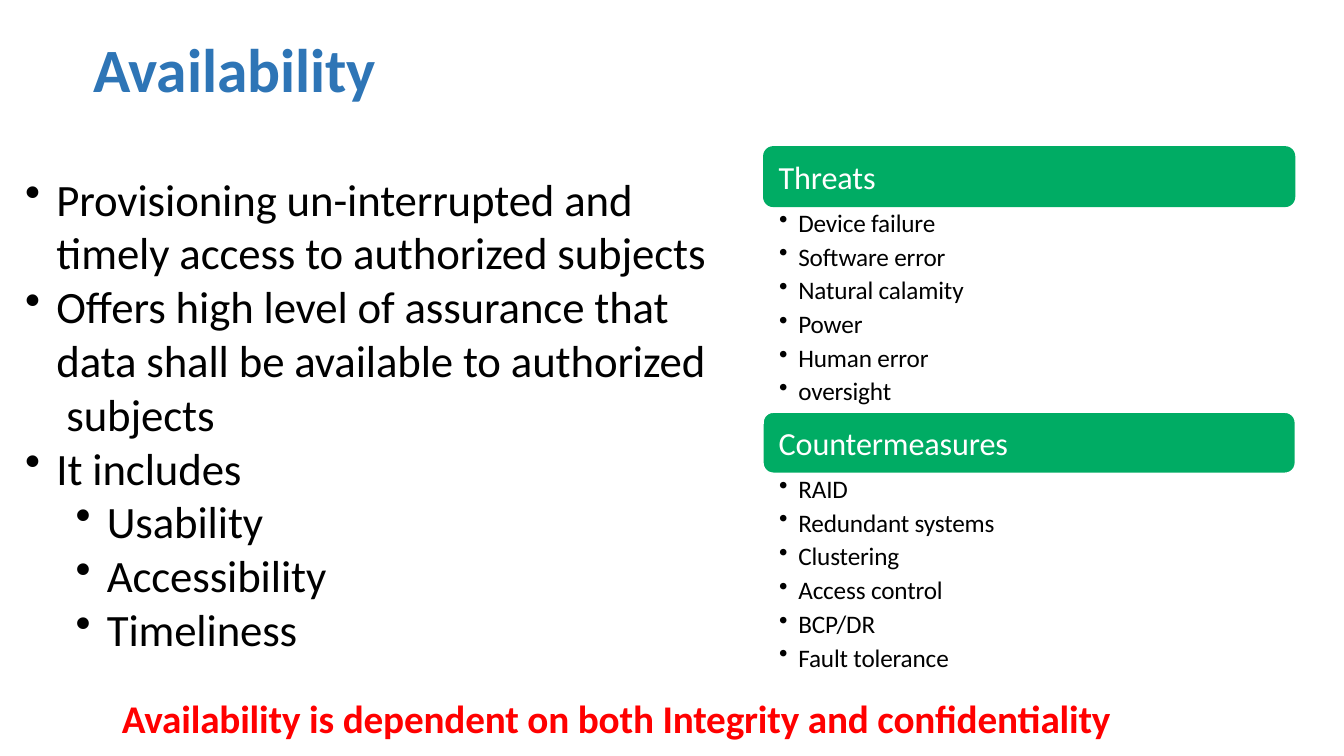
from dataclasses import dataclass

import pptx
import pptx.dml.color
import pptx.enum.shapes
import pptx.enum.text
import pptx.oxml.ns
import pptx.util
from lxml import etree

CELL = 1 / 12  # inches; the slide is a grid of 160 columns by 90 rows


@dataclass(frozen=True)
class Theme:
    font: str = "Calibri"
    blue: str = "2E75B6"
    green: str = "00AC64"
    red: str = "FF0000"
    white: str = "FFFFFF"
    black: str = "000000"
    title: int = 44
    body: int = 32
    note: int = 28
    head: int = 23
    item: int = 18


THEME = Theme()


def grid(cells):
    return pptx.util.Inches(cells * CELL)


def color(code):
    return pptx.dml.color.RGBColor.from_string(code)


def bullet(para, left, hang):
    props = para._p.get_or_add_pPr()
    props.set("marL", str(grid(left)))
    props.set("indent", str(-grid(hang)))
    mark = etree.SubElement(props, pptx.oxml.ns.qn("a:buChar"))
    mark.set("char", "•")


def write(frame, lines, size, ink=THEME.black, bold=False, gap=0,
          inset=0, middle=False, lefts=None, hang=0):
    """Fill a frame with (level, text) lines; lefts holds the bullet indent of each level."""
    frame.word_wrap = True
    frame.margin_left = grid(inset)
    frame.margin_right = frame.margin_top = frame.margin_bottom = 0
    anchor = pptx.enum.text.MSO_ANCHOR
    frame.vertical_anchor = anchor.MIDDLE if middle else anchor.TOP
    for i, (level, text) in enumerate(lines):
        para = frame.add_paragraph() if i else frame.paragraphs[0]
        para.text = text
        para.level = level
        para.alignment = pptx.enum.text.PP_ALIGN.LEFT
        if lefts:
            bullet(para, lefts[level], hang)
        para.space_before = pptx.util.Pt(gap if i else 0)
        for run in para.runs:
            run.font.name = THEME.font
            run.font.size = pptx.util.Pt(size)
            run.font.bold = bold
            run.font.color.rgb = color(ink)
            run._r.get_or_add_rPr().set("spc", "-10")


def label(slide, box, lines, size, **style):
    shape = slide.shapes.add_textbox(*map(grid, box))
    write(shape.text_frame, lines, size, **style)


def panel(slide, box, head, items, edge=False):
    """Green bar with its bulleted list below."""
    x, y, w, h = box
    bar = 7.25
    shape = slide.shapes.add_shape(
        pptx.enum.shapes.MSO_SHAPE.ROUNDED_RECTANGLE, *map(grid, (x, y, w, bar)))
    shape.shadow.inherit = False
    shape.fill.solid()
    shape.fill.fore_color.rgb = color(THEME.green)
    if edge:
        shape.line.color.rgb = color(THEME.white)
        shape.line.width = pptx.util.Pt(1)
    else:
        shape.line.fill.background()
    write(shape.text_frame, [(0, head)], THEME.head, ink=THEME.white,
          inset=1.5, middle=True)
    label(slide, (x, y + bar, w, h - bar), [(0, item) for item in items],
          THEME.item, gap=2.5, lefts=[4.2], hang=2.28)


def panels(slide, box, groups):
    x, y, w, h = box
    step = h / len(groups)
    for i, (head, items) in enumerate(groups.items()):
        panel(slide, (x, y + i * step, w, step), head, items, edge=i > 0)


def main():
    deck = pptx.Presentation()
    deck.slide_width, deck.slide_height = grid(160), grid(90)
    slide = deck.slides.add_slide(deck.slide_layouts[6])

    label(slide, (11.1, 3.6, 50, 9), [(0, "Availability")], THEME.title,
          ink=THEME.blue, bold=True, middle=True)
    panels(slide, (90.84, 17.4, 63.36, 63.36), {
        "Threats": ["Device failure", "Software error", "Natural calamity",
                    "Power", "Human error", "oversight"],
        "Countermeasures": ["RAID", "Redundant systems", "Clustering",
                            "Access control", "BCP/DR", "Fault tolerance"],
    })
    label(slide, (2.76, 20.4, 82, 58), [
        (0, "Provisioning un-interrupted and timely access to authorized subjects"),
        (0, "Offers high level of assurance that data shall be available "
            "to authorized\n subjects"),
        (0, "It includes"),
        (1, "Usability"),
        (1, "Accessibility"),
        (1, "Timeliness"),
    ], THEME.body, lefts=[3.96, 9.96], hang=3.72)
    label(slide, (14.5, 82.7, 119.4, 5.9),
          [(0, "Availability is dependent on both Integrity and confidentiality")],
          THEME.note, ink=THEME.red, bold=True)
    deck.save("out.pptx")


if __name__ == "__main__":
    main()
